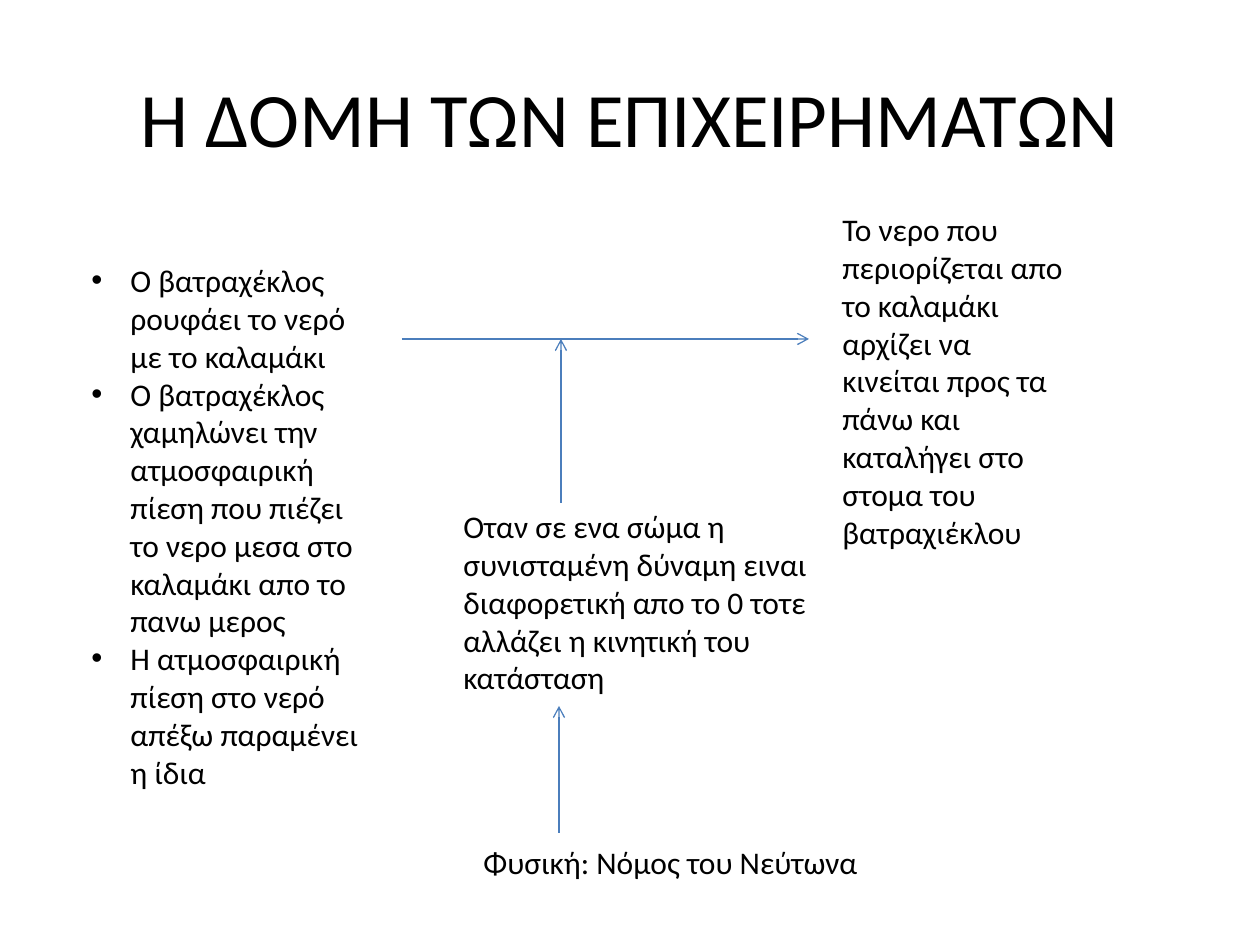
from lxml.etree import SubElement
from pptx import Presentation
from pptx.dml.color import RGBColor
from pptx.enum.shapes import MSO_CONNECTOR
from pptx.enum.text import MSO_ANCHOR, PP_ALIGN
from pptx.oxml.ns import qn
from pptx.util import Emu, Pt

PX = 914400 // 126
INDENT = 39


def color(hex_string):
    return RGBColor.from_string(hex_string)


presentation = Presentation()
presentation.slide_width = Emu(1260 * PX)
presentation.slide_height = Emu(945 * PX)
slide = presentation.slides.add_slide(presentation.slide_layouts[6])

title_format = {"size": Pt(44), "name": "Calibri"}
body_format = {"size": Pt(18), "name": "Calibri"}

# Box in px, paragraphs, font format, role
texts = [
    ((63, 38, 1134, 158), ["Η ΔΟΜΗ ΤΩΝ ΕΠΙΧΕΙΡΗΜΑΤΩΝ"], title_format, "title"),
    ((79, 255, 307, 547), [
        "Ο βατραχέκλος ρουφάει το νερό με το καλαμάκι",
        "Ο βατραχέκλος χαμηλώνει την ατμοσφαιρική πίεση που πιέζει "
        "το νερο μεσα στο καλαμάκι απο το πανω μερος",
        "Η ατμοσφαιρική πίεση στο νερό απέξω παραμένει η ίδια",
    ], body_format, "bullets"),
    ((830, 204, 248, 357), [
        "Το νερο που περιορίζεται απο το καλαμάκι αρχίζει να κινείται "
        "προς τα πάνω και καταλήγει στο στομα του βατραχιέκλου",
    ], body_format, "plain"),
    ((451, 501, 377, 204), [
        "Οταν σε ενα σώμα η συνισταμένη δύναμη ειναι διαφορετική "
        "απο το 0 τοτε αλλάζει η κινητική του κατάσταση",
    ], body_format, "plain"),
    ((471, 837, 501, 50), ["Φυσική: Νόμος του Νεύτωνα"], body_format, "plain"),
]

for box, lines, font_format, role in texts:
    shape = slide.shapes.add_textbox(*(Emu(value * PX) for value in box))
    frame = shape.text_frame
    frame.word_wrap = True
    frame.vertical_anchor = MSO_ANCHOR.MIDDLE if role == "title" else MSO_ANCHOR.TOP
    frame.text = "\n".join(lines)
    for paragraph in frame.paragraphs:
        if role == "title":
            paragraph.alignment = PP_ALIGN.CENTER
        if role == "bullets":
            properties = paragraph._p.get_or_add_pPr()
            properties.set("marL", str(INDENT * PX))
            properties.set("indent", str(-INDENT * PX))
            SubElement(properties, qn("a:buFont")).set("typeface", "Arial")
            SubElement(properties, qn("a:buChar")).set("char", "•")
        for name, value in font_format.items():
            setattr(paragraph.font, name, value)
        paragraph.font.color.rgb = color("000000")

# Start and end in px: claim, warrant, backing
arrows = [
    (402, 339, 809, 339),
    (561, 503, 561, 339),
    (559, 833, 559, 706),
]

for ends in arrows:
    arrow = slide.shapes.add_connector(
        MSO_CONNECTOR.STRAIGHT, *(Emu(value * PX) for value in ends))
    arrow.line.color.rgb = color("4B7EBC")
    arrow.line.width = Pt(0.75)
    SubElement(arrow.line._get_or_add_ln(), qn("a:tailEnd")).set("type", "arrow")
    SubElement(arrow._element.spPr, qn("a:effectLst"))

presentation.save("out.pptx")
